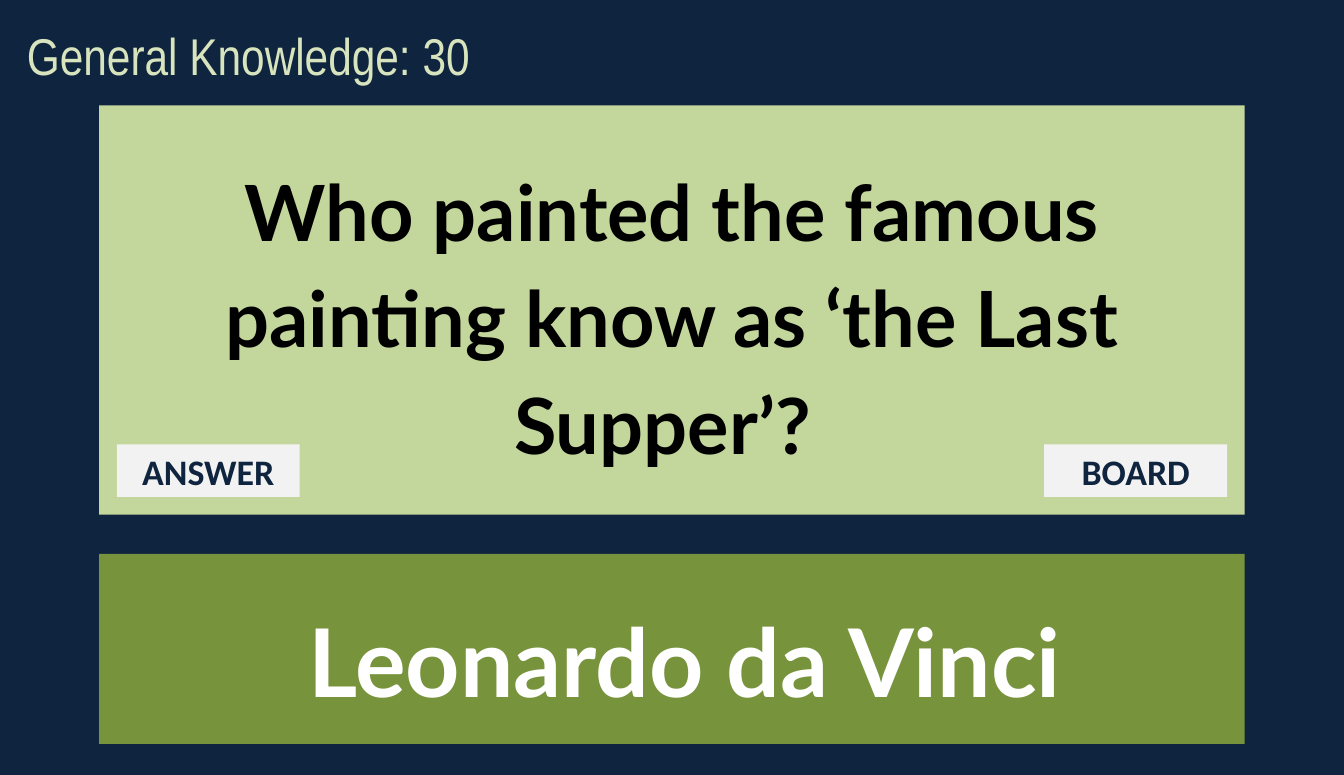
"""Build a quiz slide with a question, its answer and two labels."""
from dataclasses import dataclass

import pptx
import pptx.dml.color
import pptx.enum.shapes
import pptx.enum.text
import pptx.util
from pptx.util import Inches

ALIGN = pptx.enum.text.PP_ALIGN
ANCHOR = pptx.enum.text.MSO_ANCHOR


@dataclass(frozen=True)
class TextStyle:
    """Describe the lettering and spacing of a text."""

    font: str
    size: float
    color: str
    bold: bool = True
    align: ALIGN = ALIGN.CENTER
    anchor: ANCHOR = ANCHOR.MIDDLE
    line_spacing: float = 1.0
    space_after: float = 0
    indent: float = 0


@dataclass(frozen=True)
class Theme:
    """Hold the colours and text styles of the slide."""

    background: str = "0F243E"
    question_fill: str = "C3D69B"
    answer_fill: str = "77933C"
    label_fill: str = "F2F2F2"
    heading: TextStyle = TextStyle(
        "Arial Narrow", 36, "D7E4BD", bold=False, align=ALIGN.LEFT, anchor=ANCHOR.TOP
    )
    question: TextStyle = TextStyle("Lato", 54, "000000", line_spacing=1.15, space_after=8)
    answer: TextStyle = TextStyle(
        "Lato", 66, "FFFFFF", anchor=ANCHOR.TOP, line_spacing=1.15, space_after=8, indent=0.25
    )
    label: TextStyle = TextStyle("Calibri", 25, "0F243E")


@dataclass(frozen=True)
class Area:
    """Give a position and size in inches."""

    left: float
    top: float
    width: float
    height: float

    def lengths(self) -> tuple:
        """Return the four values as lengths."""
        return tuple(map(Inches, (self.left, self.top, self.width, self.height)))


@dataclass(frozen=True)
class Panel:
    """Describe a filled rectangle and its optional text."""

    area: Area
    fill: str
    text: str = ""
    style: TextStyle | None = None


THEME = Theme()
LABEL_TOP, LABEL_WIDTH, LABEL_HEIGHT = 4.3, 1.77, 0.51
PANELS = (
    Panel(
        Area(0.96, 1.02, 11.08, 3.96),
        THEME.question_fill,
        "Who painted the famous painting know as ‘the Last Supper’? ",
        THEME.question,
    ),
    Panel(Area(0.96, 5.36, 11.08, 1.84), THEME.answer_fill),
    *(
        Panel(Area(left, LABEL_TOP, LABEL_WIDTH, LABEL_HEIGHT), THEME.label_fill, text, THEME.label)
        for left, text in ((10.1, "BOARD"), (1.13, "ANSWER"))
    ),
)


def rgb(color: str) -> pptx.dml.color.RGBColor:
    """Convert a hex code to a colour."""
    return pptx.dml.color.RGBColor.from_string(color)


def write(box, text: str, style: TextStyle) -> None:
    """Put styled text into a box."""
    frame = box.text_frame
    frame.text = text
    frame.word_wrap = True
    frame.auto_size = pptx.enum.text.MSO_AUTO_SIZE.NONE
    frame.vertical_anchor = style.anchor
    frame.margin_left = Inches(0.1 + style.indent)
    for para in frame.paragraphs:
        para.alignment = style.align
        para.line_spacing = style.line_spacing
        para.space_after = pptx.util.Pt(style.space_after)
        for span in para.runs:
            span.font.name = style.font
            span.font.size = pptx.util.Pt(style.size)
            span.font.bold = style.bold
            span.font.color.rgb = rgb(style.color)


def draw_panel(page, panel: Panel) -> None:
    """Draw one flat rectangle with its text."""
    box = page.shapes.add_shape(
        pptx.enum.shapes.MSO_SHAPE.RECTANGLE, *panel.area.lengths()
    )
    box.shadow.inherit = False
    box.fill.solid()
    box.fill.fore_color.rgb = rgb(panel.fill)
    box.line.fill.background()
    if panel.style:
        write(box, panel.text, panel.style)


def main() -> None:
    """Build and save the deck."""
    deck = pptx.Presentation()
    deck.slide_width, deck.slide_height = Inches(13), Inches(7.5)
    page = deck.slides.add_slide(deck.slide_layouts.get_by_name("Title Only"))
    page.background.fill.solid()
    page.background.fill.fore_color.rgb = rgb(THEME.background)

    title = page.shapes.title
    title.left, title.top, title.width, title.height = Area(0.16, 0.18, 5.47, 0.71).lengths()
    write(title, "General Knowledge: 30", THEME.heading)

    for panel in PANELS:
        draw_panel(page, panel)

    answer = page.shapes.add_textbox(*Area(1.13, 5.62, 10.74, 1.32).lengths())
    write(answer, "Leonardo da Vinci", THEME.answer)
    deck.save("out.pptx")


if __name__ == "__main__":
    main()
